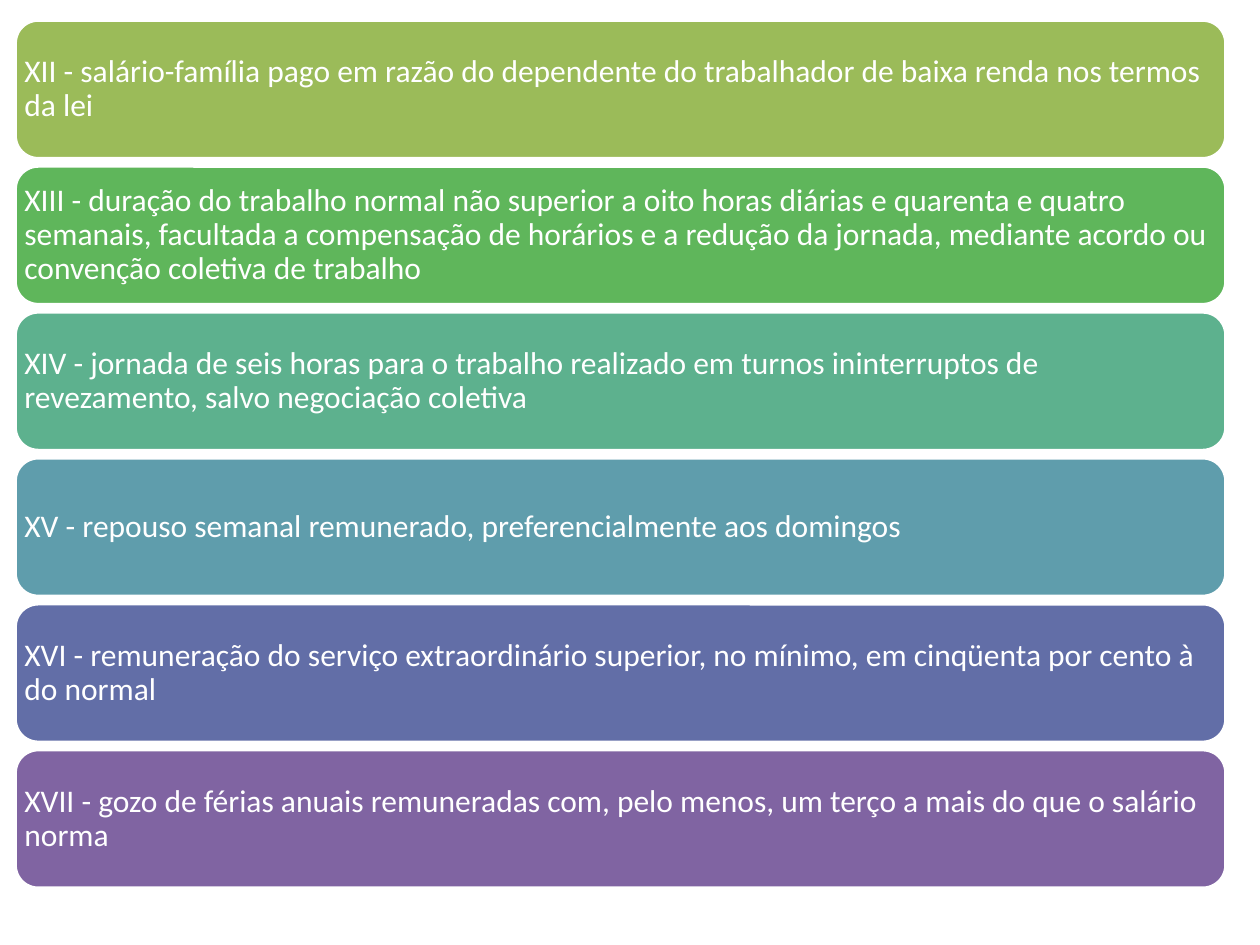
from pptx import Presentation
from pptx.dml.color import RGBColor
from pptx.enum import shapes, text
from pptx.util import Inches, Pt

WHITE = RGBColor(0xFF, 0xFF, 0xFF)
OLIVE = RGBColor(0x9B, 0xBB, 0x59)
GREEN = RGBColor(0x5F, 0xB6, 0x5B)
JADE = RGBColor(0x5D, 0xB1, 0x8E)
TEAL = RGBColor(0x5F, 0x9D, 0xAC)
BLUE = RGBColor(0x62, 0x6E, 0xA7)
PURPLE = RGBColor(0x80, 0x64, 0xA2)

RIGHTS = [
    (OLIVE, "XII - salário-família pago em razão do dependente do trabalhador "
            "de baixa renda nos termos da lei"),
    (GREEN, "XIII - duração do trabalho normal não superior a oito horas diárias "
            "e quarenta e quatro semanais, facultada a compensação de horários e "
            "a redução da jornada, mediante acordo ou convenção coletiva de trabalho"),
    (JADE, "XIV - jornada de seis horas para o trabalho realizado em turnos "
           "ininterruptos de revezamento, salvo negociação coletiva"),
    (TEAL, "XV - repouso semanal remunerado, preferencialmente aos domingos"),
    (BLUE, "XVI - remuneração do serviço extraordinário superior, no mínimo, "
           "em cinqüenta por cento à do normal"),
    (PURPLE, "XVII - gozo de férias anuais remuneradas com, pelo menos, um terço "
             "a mais do que o salário norma"),
]


def add_bar(slide, left, top, width, height, color, words):
    """Draw one rounded bar with its text inside the given box."""
    bar = slide.shapes.add_shape(shapes.MSO_SHAPE.ROUNDED_RECTANGLE,
                                 left, top, width, height)
    bar.shadow.inherit = False
    bar.fill.solid()
    bar.fill.fore_color.rgb = color
    bar.line.color.rgb = WHITE
    bar.line.width = Pt(2)
    frame = bar.text_frame
    frame.word_wrap = True
    frame.vertical_anchor = text.MSO_ANCHOR.MIDDLE
    frame.margin_left = frame.margin_right = Inches(0.02)
    frame.margin_top = frame.margin_bottom = Inches(0.02)
    para = frame.paragraphs[0]
    para.alignment = text.PP_ALIGN.LEFT
    para.line_spacing = 0.9
    run = para.add_run()
    run.text = words
    run.font.name = "Calibri"
    run.font.size = Pt(18)
    run.font.color.rgb = WHITE


def add_list(slide, left, top, width, height, items):
    """Stack the bars at an equal pitch so that they fill the given box."""
    tall = Inches(1.1)
    pitch = (height - tall) / (len(items) - 1)
    for i, (color, words) in enumerate(items):
        add_bar(slide, left, round(top + i * pitch), width, tall, color, words)


def main():
    """Build the slide and save it."""
    deck = Presentation()
    deck.slide_width, deck.slide_height = Inches(10), Inches(7.5)
    slide = deck.slides.add_slide(deck.slide_layouts[6])
    add_list(slide, Inches(0.12), Inches(0.16), Inches(9.61), Inches(6.89), RIGHTS)
    deck.save("out.pptx")


if __name__ == "__main__":
    main()
